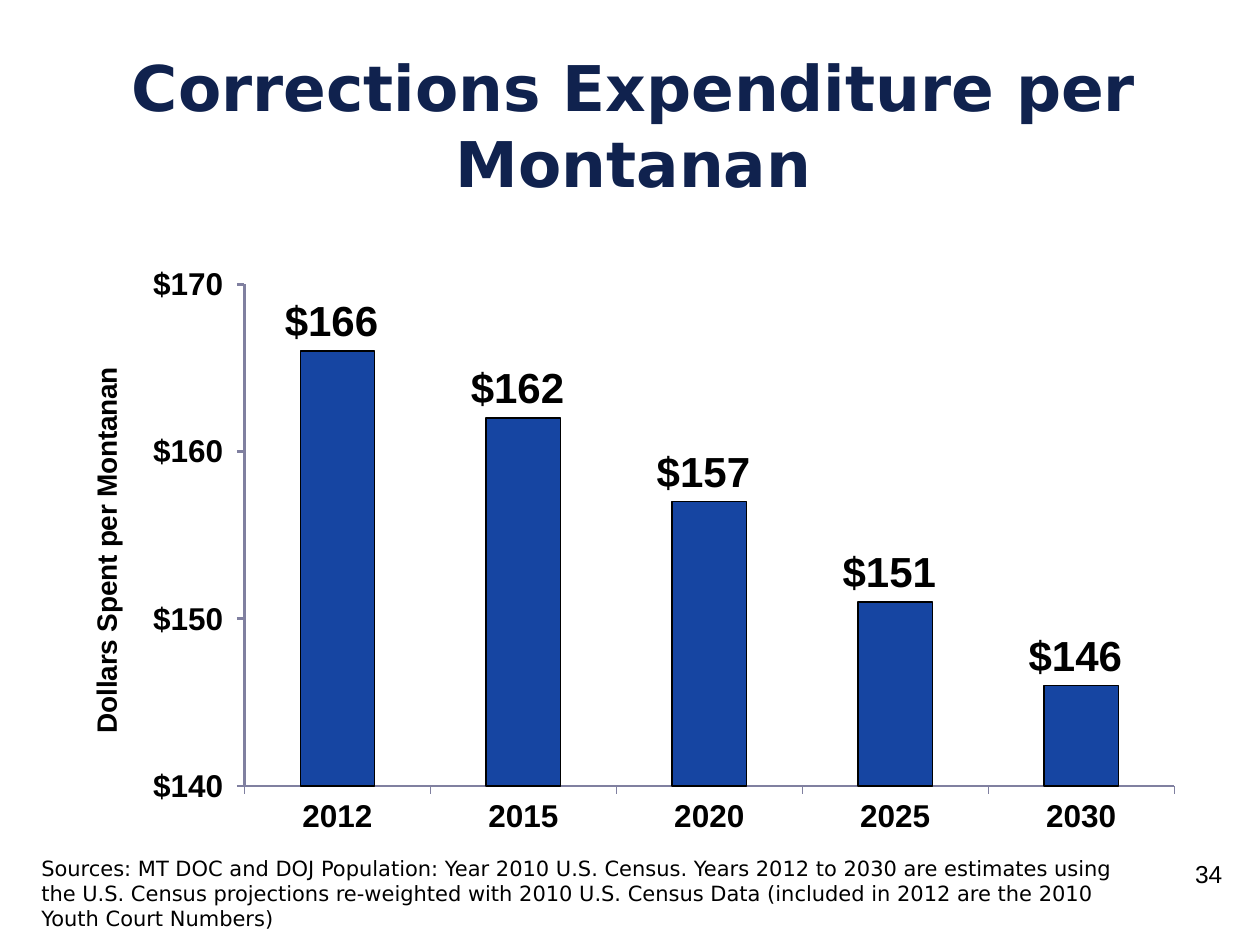
from lxml import etree
from pptx import Presentation
from pptx.chart.data import CategoryChartData
from pptx.dml.color import RGBColor
from pptx.enum.chart import XL_CHART_TYPE, XL_LABEL_POSITION, XL_TICK_MARK
from pptx.enum.text import MSO_ANCHOR, PP_ALIGN
from pptx.oxml.ns import qn
from pptx.util import Inches, Pt

COLUMN = XL_CHART_TYPE.COLUMN_CLUSTERED
OUTSIDE_END = XL_LABEL_POSITION.OUTSIDE_END
TICK_OUT = XL_TICK_MARK.OUTSIDE
TOP, MIDDLE = MSO_ANCHOR.TOP, MSO_ANCHOR.MIDDLE
LEFT, CENTER, RIGHT = PP_ALIGN.LEFT, PP_ALIGN.CENTER, PP_ALIGN.RIGHT

NAVY = RGBColor(0x10, 0x22, 0x4E)
BLUE = RGBColor(0x16, 0x45, 0xA2)
AXIS_GRAY = RGBColor(0x80, 0x80, 0xA0)
BLACK = RGBColor(0, 0, 0)
HEAD_FONT, CHART_FONT = "DejaVu Sans", "Arial"
DOLLARS = r"\$#,##0_);[Red]\(\$#,##0\)"

SPENDING = {"2012": 166, "2015": 162, "2020": 157, "2025": 151, "2030": 146}
SOURCES = (
    "Sources: MT DOC and DOJ Population: Year 2010 U.S. Census. Years 2012 to 2030 "
    "are estimates using the U.S. Census projections re-weighted with 2010 U.S. "
    "Census Data (included in 2012 are the 2010 Youth Court Numbers)"
)


def style_font(font, size, name=CHART_FONT, color=BLACK, bold=False):
    font.size, font.name, font.bold = Pt(size), name, bold
    font.color.rgb = color


def add_text(s, box, text, size, name, color=BLACK, bold=False, align=LEFT, anchor=TOP):
    tf = s.shapes.add_textbox(*map(Inches, box)).text_frame
    tf.word_wrap = True
    tf.vertical_anchor = anchor
    p = tf.paragraphs[0]
    p.text = text
    p.alignment = align
    style_font(p.runs[0].font, size, name, color, bold)


def set_plot_area(chart, x, y, w, h):
    """Fix the inner plot area, given as shares of the chart's size."""
    plot_area = chart.plots[0]._element.getparent()
    for old in plot_area.findall(qn("c:layout")):
        plot_area.remove(old)
    layout = etree.Element(qn("c:layout"))
    manual = etree.SubElement(layout, qn("c:manualLayout"))
    settings = {"layoutTarget": "inner", "xMode": "edge", "yMode": "edge",
                "x": x, "y": y, "w": w, "h": h}
    for tag, value in settings.items():
        etree.SubElement(manual, qn(f"c:{tag}")).set("val", str(value))
    plot_area.insert(0, layout)


def add_spending_chart(s, box):
    data = CategoryChartData()
    data.categories = list(SPENDING)
    data.add_series("Series 1", list(SPENDING.values()))
    chart = s.shapes.add_chart(COLUMN, *map(Inches, box), data).chart
    chart.has_legend = chart.has_title = False
    style_font(chart.font, 18, HEAD_FONT)
    set_plot_area(chart, 0.16, 0.07, 0.82, 0.83)

    # Columns and their labels
    plot = chart.plots[0]
    plot.gap_width = 150
    plot.vary_by_categories = False
    series = plot.series[0]
    series.format.fill.solid()
    series.format.fill.fore_color.rgb = BLUE
    series.format.line.color.rgb = BLACK
    series.format.line.width = Pt(0.75)
    labels = series.data_labels
    labels.show_value = True
    labels.position = OUTSIDE_END
    labels.number_format, labels.number_format_is_linked = DOLLARS, False
    style_font(labels.font, 24, bold=True)

    # Axes
    for axis, width in ((chart.category_axis, 0.75), (chart.value_axis, 1.5)):
        axis.has_major_gridlines = False
        axis.major_tick_mark = TICK_OUT
        axis.format.line.color.rgb = AXIS_GRAY
        axis.format.line.width = Pt(width)
        style_font(axis.tick_labels.font, 18, bold=True)
    value_axis = chart.value_axis
    value_axis.minimum_scale, value_axis.maximum_scale = 140, 170
    value_axis.major_unit = 10
    value_axis.tick_labels.number_format = DOLLARS
    value_axis.tick_labels.number_format_is_linked = False
    tf = value_axis.axis_title.text_frame
    tf.text = "Dollars Spent per Montanan"
    style_font(tf.paragraphs[0].runs[0].font, 16, bold=True)


def add_footer(s, left, top):
    add_text(s, (left, top, 8.9, 0.76), SOURCES, 12, HEAD_FONT)
    add_text(s, (left + 9.09, top + 0.03, 0.48, 0.52), "34", 14, CHART_FONT, align=RIGHT)


def main():
    prs = Presentation()
    prs.slide_width, prs.slide_height = Inches(10), Inches(7.5)
    s = prs.slides.add_slide(prs.slide_layouts[6])
    add_text(s, (0.26, 0.3, 9.54, 1.37), "Corrections Expenditure per Montanan",
             36, HEAD_FONT, NAVY, True, CENTER, MIDDLE)
    add_spending_chart(s, (0.5, 1.92, 9, 4.8))
    add_footer(s, 0.23, 6.74)
    prs.save("out.pptx")


if __name__ == "__main__":
    main()
